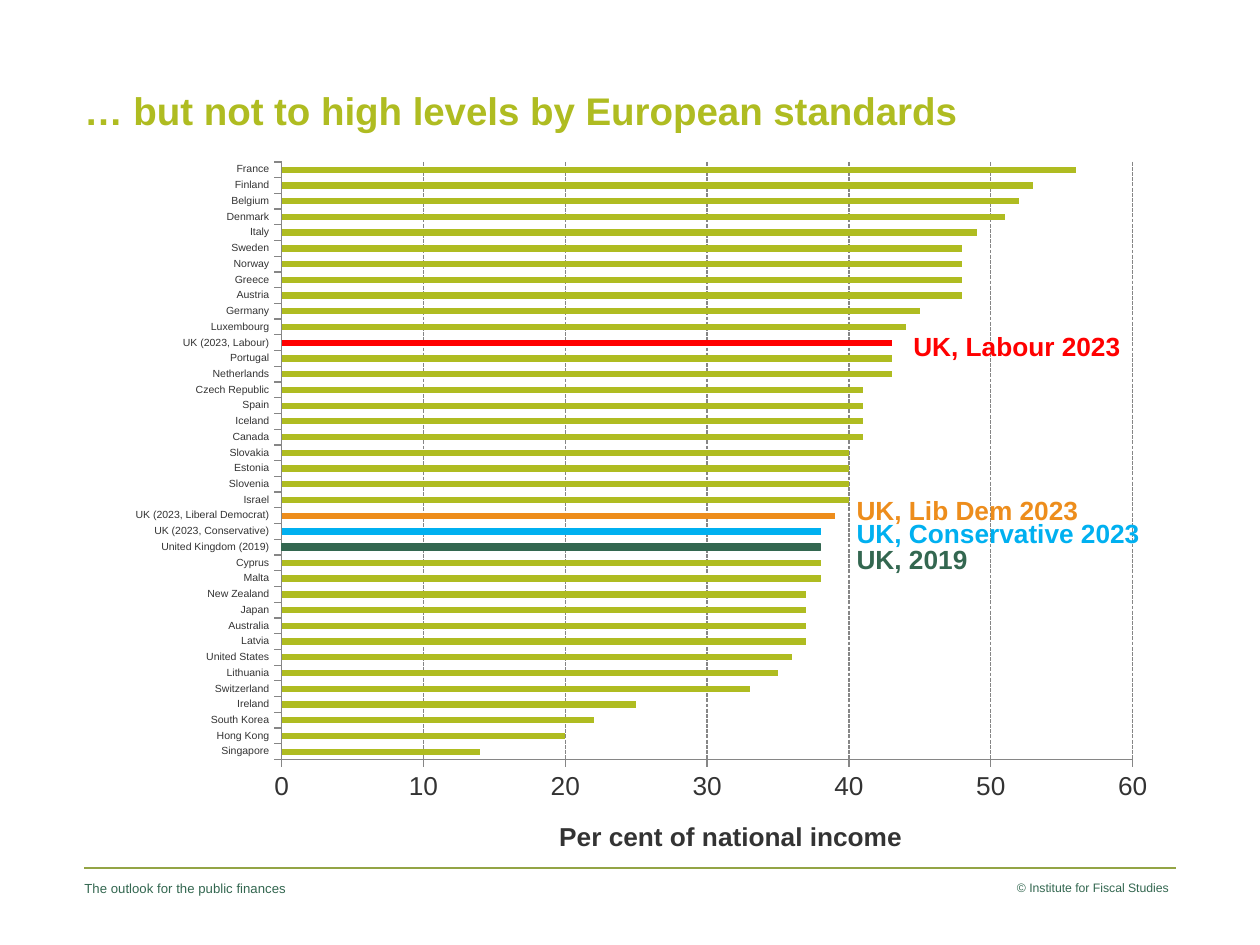
"""Build a slide ranking government revenue by country as a bar chart."""
from lxml.etree import SubElement
from pptx import Presentation
from pptx.chart.data import CategoryChartData
from pptx.dml.color import RGBColor
from pptx.enum.chart import XL_CHART_TYPE as CHART, XL_TICK_LABEL_POSITION as LABELS, XL_TICK_MARK as TICK
from pptx.enum.dml import MSO_LINE
from pptx.enum.shapes import MSO_CONNECTOR
from pptx.enum.text import MSO_ANCHOR as ANCHOR, PP_ALIGN as ALIGN
from pptx.oxml import parse_xml
from pptx.oxml.ns import nsdecls, qn
from pptx.util import Pt

COLORS = {"lime": "AFBC21", "green": "336750", "blue": "00B0F0", "orange": "ED8D1C",
          "red": "FF0000", "text": "333333", "axis": "868686", "rule": "93A445"}

REVENUE = [
    ("Singapore", 14), ("Hong Kong", 20), ("South Korea", 22), ("Ireland", 25),
    ("Switzerland", 33), ("Lithuania", 35), ("United States", 36), ("Latvia", 37),
    ("Australia", 37), ("Japan", 37), ("New Zealand", 37), ("Malta", 38), ("Cyprus", 38),
    ("United Kingdom (2019)", 38), ("UK (2023, Conservative)", 38),
    ("UK (2023, Liberal Democrat)", 39), ("Israel", 40), ("Slovenia", 40),
    ("Estonia", 40), ("Slovakia", 40), ("Canada", 41), ("Iceland", 41), ("Spain", 41),
    ("Czech Republic", 41), ("Netherlands", 43), ("Portugal", 43),
    ("UK (2023, Labour)", 43), ("Luxembourg", 44), ("Germany", 45), ("Austria", 48),
    ("Greece", 48), ("Norway", 48), ("Sweden", 48), ("Italy", 49), ("Denmark", 51),
    ("Belgium", 52), ("Finland", 53), ("France", 56)]
HIGHLIGHTS = {"United Kingdom (2019)": "green", "UK (2023, Conservative)": "blue",
              "UK (2023, Liberal Democrat)": "orange", "UK (2023, Labour)": "red"}
CALLOUTS = [("UK, Conservative 2023", "blue", 670, 406), ("UK, Labour 2023", "red", 715, 257),
            ("UK, 2019", "green", 670, 426), ("UK, Lib Dem 2023", "orange", 670, 387)]


def px(n):
    """Turn px, at 100 to the inch, into EMU."""
    return n * 9144


def rgb(name):
    """Look up a named colour."""
    return RGBColor.from_string(COLORS[name])


class Deck:
    """Hold the font and the current slide."""

    def __init__(self, font="Arial"):
        """Start a presentation with one title-only slide."""
        self.prs = Presentation()
        self.prs.slide_width, self.prs.slide_height = px(1000), px(750)
        self.s = self.prs.slides.add_slide(self.prs.slide_layouts[5])
        self.font = font

    def style(self, font, size, color, bold=False):
        """Apply the deck's typeface to a font."""
        font.name, font.size, font.bold = self.font, Pt(size), bold
        font.color.rgb = rgb(color)

    def fill_text(self, sp, text, size, color, bold=False, align=ALIGN.LEFT, anchor=ANCHOR.TOP, inset=0):
        """Fill a shape with one styled run."""
        tf = sp.text_frame
        tf.word_wrap, tf.vertical_anchor = True, anchor
        tf.margin_left = tf.margin_right = px(inset)
        tf.margin_top = tf.margin_bottom = px(inset // 2)
        p = tf.paragraphs[0]
        p.alignment = align
        r = p.add_run()
        r.text = text
        self.style(r.font, size, color, bold)

    def title(self, text, x, y, w, h):
        """Place and fill the title placeholder."""
        sp = self.s.shapes.title
        sp.left, sp.top, sp.width, sp.height = map(px, (x, y, w, h))
        self.fill_text(sp, text, 22, "lime", True, anchor=ANCHOR.MIDDLE)

    def text(self, text, x, y, w, h, size, color, **options):
        """Add a text box."""
        sp = self.s.shapes.add_textbox(*map(px, (x, y, w, h)))
        self.fill_text(sp, text, size, color, **options)

    def rule(self, x1, x2, y):
        """Add a thin horizontal line."""
        line = self.s.shapes.add_connector(MSO_CONNECTOR.STRAIGHT, *map(px, (x1, y, x2, y)))
        line.line.color.rgb, line.line.width = rgb("rule"), Pt(0.75)
        SubElement(line._element.spPr, qn("a:effectLst"))

    def layout(self, parent, inner=False, **place):
        """Fix the position of a chart part as fractions of the chart."""
        old = parent.find(qn("c:layout"))
        at = 0 if old is None else parent.index(old)
        if old is not None:
            parent.remove(old)
        target = '<c:layoutTarget val="inner"/>' if inner else ""
        modes = "".join(f'<c:{k}Mode val="edge"/>' for k in "xy")
        values = "".join(f'<c:{k} val="{v}"/>' for k, v in place.items())
        parent.insert(at, parse_xml(f'<c:layout {nsdecls("c")}><c:manualLayout>{target}{modes}'
                                    f'{values}</c:manualLayout></c:layout>'))

    def axis(self, axis, size):
        """Style an axis line, its ticks and its labels."""
        axis.format.line.color.rgb = rgb("axis")
        axis.major_tick_mark, axis.minor_tick_mark = TICK.OUTSIDE, TICK.NONE
        axis.tick_label_position = LABELS.LOW
        self.style(axis.tick_labels.font, size, "text")

    def bars(self, rows, highlights, axis_title, x, y, w, h):
        """Add a bar chart with one overlapping series per colour."""
        data = CategoryChartData()
        data.categories = [name for name, _ in rows]
        data.add_series("Series 1", [None if n in highlights else v for n, v in rows])
        for i, key in enumerate(highlights, 2):
            data.add_series(f"Series {i}", [v if n == key else None for n, v in rows])
        chart = self.s.shapes.add_chart(CHART.BAR_CLUSTERED, *map(px, (x, y, w, h)), data).chart
        chart.has_legend = chart.has_title = False
        self.style(chart.font, 14, "text")
        plot = chart.plots[0]
        plot.gap_width, plot.overlap, plot.vary_by_categories = 150, 100, False
        for series, color in zip(plot.series, ["lime", *highlights.values()]):
            series.format.fill.solid()
            series.format.fill.fore_color.rgb = rgb(color)
            series.invert_if_negative = False
            if color == "green":
                series.format.line.color.rgb, series.format.line.width = rgb(color), Pt(0.75)
        self.axis(chart.category_axis, 6)
        axis = chart.value_axis
        self.axis(axis, 15)
        axis.minimum_scale, axis.maximum_scale, axis.major_unit = 0, 60, 10
        axis.tick_labels.number_format, axis.tick_labels.number_format_is_linked = "0", False
        axis.has_major_gridlines = True
        grid = axis.major_gridlines.format.line
        grid.color.rgb, grid.width, grid.dash_style = rgb("axis"), Pt(0.75), MSO_LINE.SQUARE_DOT
        r = axis.axis_title.text_frame.paragraphs[0].add_run()
        r.text = axis_title
        self.style(r.font, 15, "text", True)
        self.layout(axis.axis_title._element, x=0.44, y=0.95)
        self.layout(chart._chartSpace.chart.plotArea, True, x=0.19, y=0.01, w=0.78, h=0.86)


def main():
    """Compose the slide and save it."""
    deck = Deck()
    deck.rule(67, 933, 689)
    deck.title("… but not to high levels by European standards", 67, 65, 717, 44)
    deck.text("© Institute for Fiscal Studies  ", 760, 699, 173, 40, 7, "green", align=ALIGN.RIGHT)
    deck.text("The outlook for the public finances", 67, 699, 472, 40, 7.5, "green")
    deck.bars(REVENUE, HIGHLIGHTS, "Per cent of national income", 59, 123, 866, 559)
    for text, color, x, y in CALLOUTS:
        deck.text(text, x, y, 263, 35, 15, color, bold=True, inset=10)
    deck.prs.save("out.pptx")


if __name__ == "__main__":
    main()
